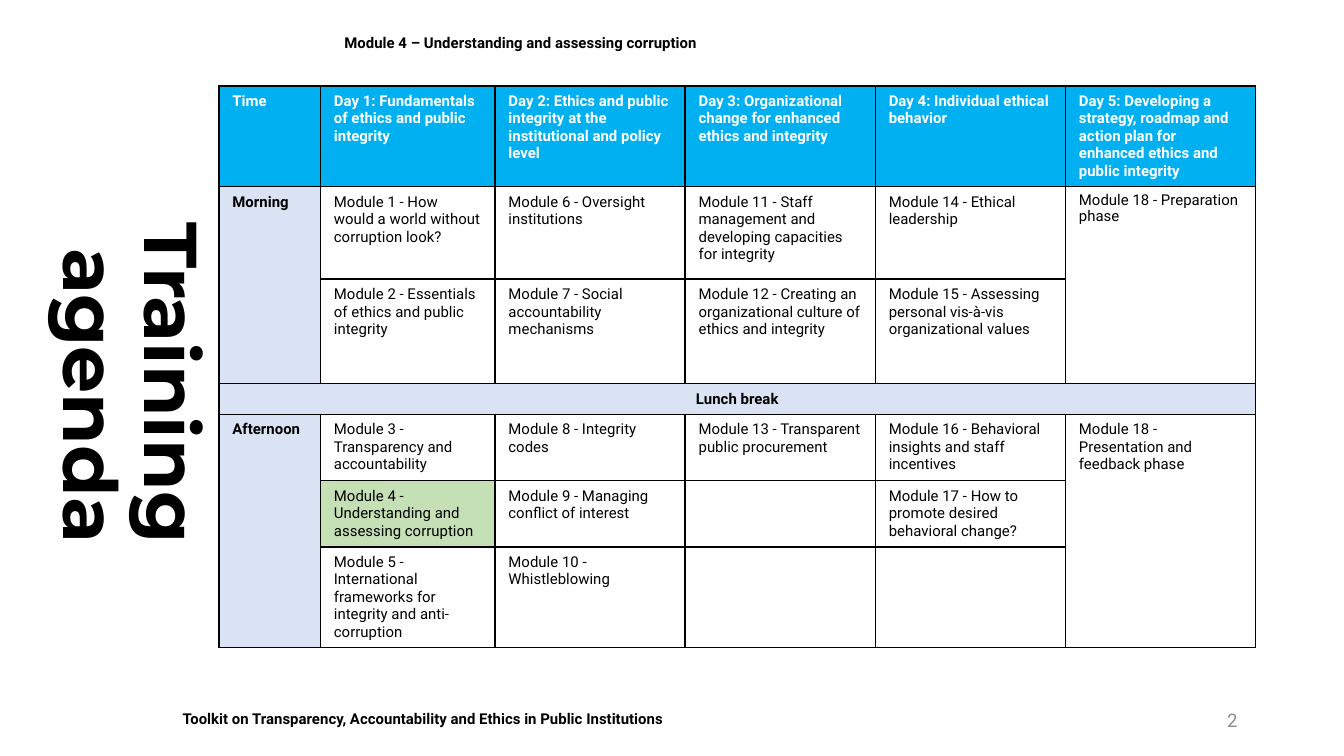
from lxml.etree import SubElement
from pptx import Presentation
from pptx.dml.color import RGBColor
from pptx.enum.text import MSO_ANCHOR, MSO_AUTO_SIZE, PP_ALIGN
from pptx.oxml.ns import qn
from pptx.util import Pt

# Content: None marks a cell covered by a merged neighbour
TITLE = "Training agenda"
HEADING = "Module 4 – Understanding and assessing corruption"
FOOTER = "Toolkit on Transparency, Accountability and Ethics in Public Institutions"
PAGE_NUMBER = "2"
AGENDA = [
    ["Time",
     "Day 1: Fundamentals of ethics and public integrity",
     "Day 2: Ethics and public integrity at the institutional and policy level",
     "Day 3: Organizational change for enhanced ethics and integrity",
     "Day 4: Individual ethical behavior",
     "Day 5: Developing a strategy, roadmap and action plan for enhanced ethics and public integrity"],
    ["Morning",
     "Module 1 - How would a world without corruption look?",
     "Module 6 - Oversight institutions",
     "Module 11 - Staff management and developing capacities for integrity",
     "Module 14 - Ethical leadership",
     "Module 18 - Preparation phase"],
    [None,
     "Module 2 - Essentials of ethics and public integrity",
     "Module 7 - Social accountability mechanisms",
     "Module 12 - Creating an organizational culture of ethics and integrity",
     "Module 15 - Assessing personal vis-à-vis organizational values",
     None],
    ["Lunch break", None, None, None, None, None],
    ["Afternoon",
     "Module 3 - Transparency and accountability",
     "Module 8 - Integrity codes",
     "Module 13 - Transparent public procurement",
     "Module 16 - Behavioral insights and staff incentives",
     "Module 18 -  Presentation and feedback phase"],
    [None,
     "Module 4 - Understanding and assessing corruption",
     "Module 9 - Managing conflict of interest",
     "",
     "Module 17 - How to promote desired behavioral change?",
     None],
    [None,
     "Module 5 - International frameworks for integrity and anti-corruption",
     "Module 10 - Whistleblowing",
     "", "", None],
]
MERGES = [((1, 0), (2, 0)), ((1, 5), (2, 5)), ((3, 0), (3, 5)),
          ((4, 0), (6, 0)), ((4, 5), (6, 5))]
LUNCH_ROW, CURRENT_MODULE, PREPARATION = 3, (5, 1), (1, 5)
COLUMN_WIDTHS = [54.4, 93.5] + [101.9] * 4
ROW_HEIGHTS = [54, 49.5, 56, 16.5, 35.5, 35.5, 54]

# Formats
BLACK, WHITE, GREY = "000000", "FFFFFF", "8C8C8C"
BLUE, PALE_BLUE, GREEN = "00B0F0", "DAE3F3", "C5E0B4"
BODY = {"name": "Roboto", "size": Pt(8), "bold": False}
STRONG = {**BODY, "bold": True}
NUMBER = {**BODY, "size": Pt(10)}
HEADLINE = {"name": "Montserrat", "size": Pt(40), "bold": True}


def colour(fill_or_font, value):
    """Apply a hex colour to a fill or a font."""
    if hasattr(fill_or_font, "solid"):
        fill_or_font.solid()
        fill_or_font.fore_color.rgb = RGBColor.from_string(value)
    else:
        fill_or_font.color.rgb = RGBColor.from_string(value)


def write(frame, text, style, text_colour=BLACK, align=PP_ALIGN.LEFT):
    para = frame.paragraphs[0]
    para.alignment = align
    span = para.add_run()
    span.text = text
    for name, value in style.items():
        setattr(span.font, name, value)
    colour(span.font, text_colour)
    return para


def add_label(page, place, text, style, text_colour=BLACK,
              align=PP_ALIGN.LEFT, anchor=MSO_ANCHOR.MIDDLE):
    box = page.shapes.add_textbox(*map(Pt, place))
    box.text_frame.word_wrap = True
    box.text_frame.vertical_anchor = anchor
    write(box.text_frame, text, style, text_colour, align)
    return box


def add_borders(cell):
    properties = cell._tc.get_or_add_tcPr()
    for side in ("lnL", "lnR", "lnT", "lnB"):
        line = SubElement(properties, qn(f"a:{side}"), w=str(Pt(1)))
        fill = SubElement(line, qn("a:solidFill"))
        SubElement(fill, qn("a:srgbClr"), val=BLACK)


def cell_fill(row, column):
    if row == 0:
        return BLUE
    if column == 0 or row == LUNCH_ROW:
        return PALE_BLUE
    return GREEN if (row, column) == CURRENT_MODULE else None


def add_agenda(page):
    frame = page.shapes.add_table(
        len(AGENDA), len(COLUMN_WIDTHS), Pt(117.3), Pt(46),
        Pt(sum(COLUMN_WIDTHS)), Pt(sum(ROW_HEIGHTS)))
    table = frame.table
    for column, width in zip(table.columns, COLUMN_WIDTHS):
        column.width = Pt(width)
    for row, height in zip(table.rows, ROW_HEIGHTS):
        row.height = Pt(height)
    for start, end in MERGES:
        table.cell(*start).merge(table.cell(*end))

    for r, texts in enumerate(AGENDA):
        for c, text in enumerate(texts):
            cell = table.cell(r, c)
            cell.margin_bottom = Pt(2.4)
            add_borders(cell)
            fill = cell_fill(r, c)
            if fill:
                colour(cell.fill, fill)
            else:
                cell.fill.background()
            if text:
                para = write(cell.text_frame, text,
                             STRONG if r == 0 or c == 0 else BODY,
                             WHITE if r == 0 else BLACK,
                             PP_ALIGN.CENTER if r == LUNCH_ROW else PP_ALIGN.LEFT)
                if (r, c) == PREPARATION:
                    para.line_spacing = 0.9


def add_title(page):
    """Turn the title a quarter clockwise about the centre of its column."""
    title = page.shapes.title
    center_x, center_y, length, depth = 68.5, 205.5, 319, 97
    title.left, title.top = Pt(center_x - length / 2), Pt(center_y - depth / 2)
    title.width, title.height = Pt(length), Pt(depth)
    title.rotation = 90
    frame = title.text_frame
    frame.word_wrap = True
    frame.auto_size = MSO_AUTO_SIZE.NONE
    frame.vertical_anchor = MSO_ANCHOR.MIDDLE
    frame.margin_left, frame.margin_right = Pt(60), Pt(74)
    write(frame, TITLE, HEADLINE, align=PP_ALIGN.RIGHT).line_spacing = 0.9


def main():
    deck = Presentation()
    deck.slide_width, deck.slide_height = Pt(720), Pt(405)
    page = deck.slides.add_slide(deck.slide_layouts[5])

    # Footer, title and labels
    footer = add_label(page, (90.7, 376.6, 516, 17), FOOTER, STRONG,
                       anchor=MSO_ANCHOR.TOP)
    colour(footer.fill, WHITE)
    add_title(page)
    add_label(page, (508, 375, 162, 22), PAGE_NUMBER, NUMBER, GREY, PP_ALIGN.RIGHT)
    add_label(page, (177.4, 6.8, 493, 32), HEADING, STRONG)

    # Five-day agenda
    add_agenda(page)
    deck.save("out.pptx")


if __name__ == "__main__":
    main()
